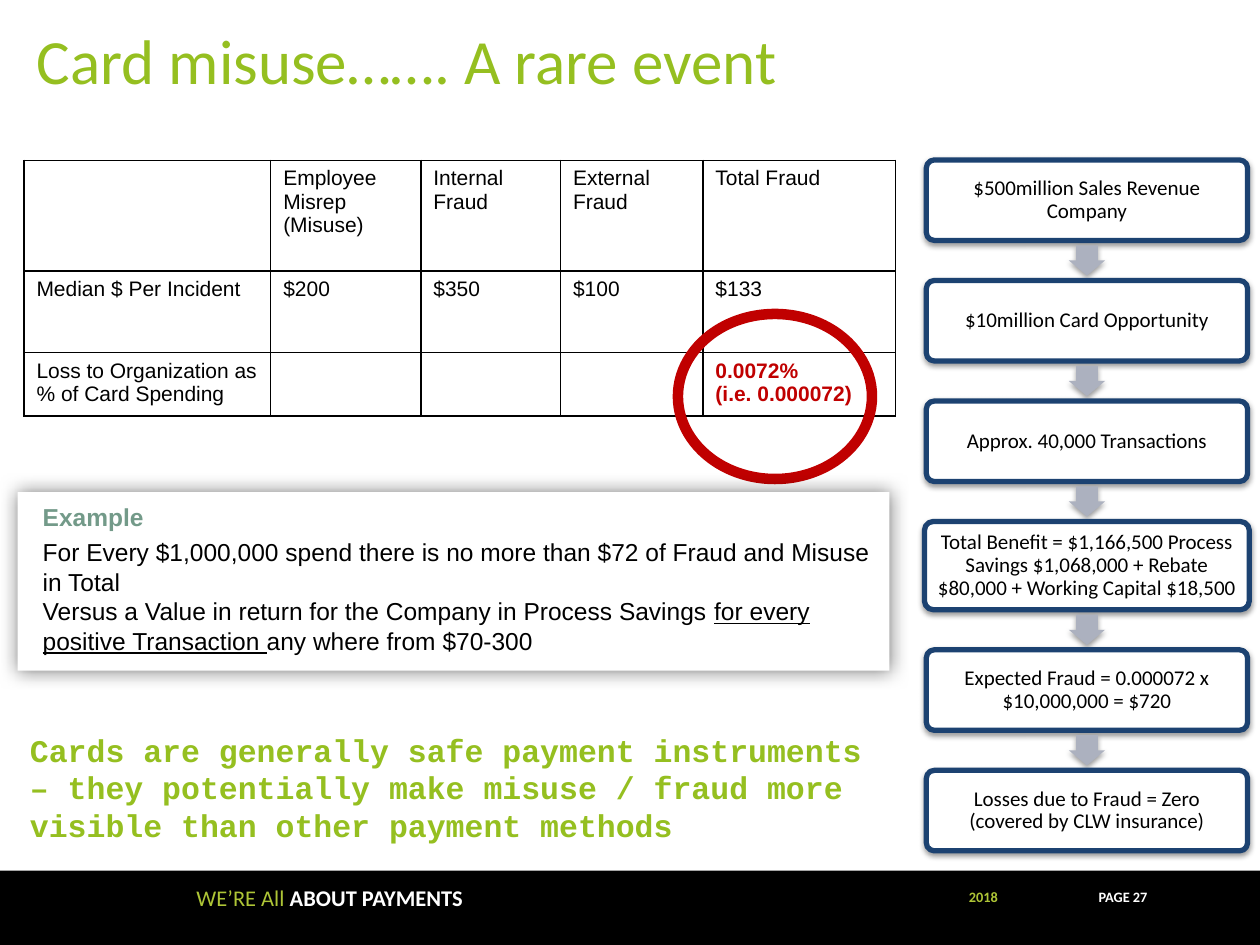
from lxml import etree
from pptx import Presentation
from pptx import util as u
from pptx.dml.color import RGBColor
from pptx.enum import shapes, text
from pptx.oxml import parse_xml
from pptx.oxml.ns import nsdecls, qn

Pt = u.Pt
HUES = {"black": "000000", "white": "FFFFFF", "lime": "95BF20", "leaf": "AEC536",
        "sage": "739A89", "red": "C00000", "navy": "1C4271", "gray": "ACB1BF"}
FORM = shapes.MSO_SHAPE
GRID = [["", "Employee Misrep (Misuse)", "Internal Fraud", "External Fraud", "Total Fraud"],
        ["Median $ Per Incident", "$200", "$350", "$100", "$133"],
        ["Loss to Organization as % of Card Spending", "", "", "", "0.0072%\n(i.e. 0.000072)"]]
STEPS = ["$500million Sales Revenue Company", "$10million Card Opportunity",
         "Approx. 40,000 Transactions",
         "Total Benefit = $1,166,500 Process Savings $1,068,000 + Rebate $80,000 + Working Capital $18,500",
         "Expected Fraud = 0.000072 x $10,000,000 = $720",
         "Losses due to Fraud = Zero (covered by CLW insurance)"]


def hue(name):
    """Return the named colour."""
    return RGBColor.from_string(HUES[name])


def add_run(para, words, size, face, tint, bold=False, line=None):
    """Add one formatted run to a paragraph."""
    run = para.add_run()
    run.text = words
    font = run.font
    font.size, font.name, font.bold, font.underline = Pt(size), face, bold, line
    font.color.rgb = hue(tint)


def set_frame(frame, pads, anchor=text.MSO_ANCHOR.TOP):
    """Set wrapping, insets and anchor of a text frame; return its first paragraph."""
    frame.word_wrap = True
    frame.vertical_anchor = anchor
    (frame.margin_left, frame.margin_top,
     frame.margin_right, frame.margin_bottom) = map(Pt, pads)
    return frame.paragraphs[0]


def add_form(slide, kind, box, fill=None, line=None, width=1):
    """Add a preset shape with a plain fill and line."""
    form = slide.shapes.add_shape(kind, *map(Pt, box))
    form.shadow.inherit = False
    if fill:
        form.fill.solid()
        form.fill.fore_color.rgb = hue(fill)
    else:
        form.fill.background()
    if line:
        form.line.color.rgb = hue(line)
        form.line.width = Pt(width)
    else:
        form.line.fill.background()
    return form


def add_shade(form, alpha, blur, dist, angle):
    """Give a shape a soft black shadow."""
    glow = form._element.spPr.find(qn("a:effectLst"))
    glow.append(parse_xml(
        f'<a:outerShdw {nsdecls("a")} blurRad="{Pt(blur)}" dist="{Pt(dist)}" '
        f'dir="{angle * 60000}" algn="ctr" rotWithShape="0"><a:srgbClr val="{HUES["black"]}">'
        f'<a:alpha val="{alpha * 1000}"/></a:srgbClr></a:outerShdw>'))


def add_text(slide, box, pads):
    """Add a text box and return its first paragraph."""
    return set_frame(slide.shapes.add_textbox(*map(Pt, box)).text_frame, pads)


def set_title(slide, box):
    """Place and format the title."""
    title = slide.shapes.title
    title.left, title.top, title.width, title.height = map(Pt, box)
    para = set_frame(title.text_frame, (7.2, 3.6, 7.2, 3.6))
    para.alignment = text.PP_ALIGN.LEFT
    add_run(para, "Card misuse……. A rare event", 36, "Calibri", "lime")


def add_edges(cell):
    """Draw a thin black line round a table cell."""
    props = cell._tc.get_or_add_tcPr()
    for side in ("lnL", "lnR", "lnT", "lnB"):
        edge = etree.SubElement(props, qn(f"a:{side}"), w=str(Pt(1)))
        fill = etree.SubElement(edge, qn("a:solidFill"))
        etree.SubElement(fill, qn("a:srgbClr"), val=HUES["black"])


def add_losses(slide, box):
    """Add the table of losses and ring its key figure."""
    left, top, width, height = box
    table = slide.shapes.add_table(3, 5, *map(Pt, box)).table
    table.first_row = table.horz_banding = False
    for col, span in zip(table.columns, (141, 85.8, 79.8, 81.4, 110.2)):
        col.width = Pt(span)
    for row, span in zip(table.rows, (63.2, 46.8, 34.5)):
        row.height = Pt(span)
    for i, row in enumerate(GRID):
        for j, words in enumerate(row):
            cell = table.cell(i, j)
            add_edges(cell)
            cell.fill.background()
            key = (i, j) == (2, 4)
            frame = cell.text_frame
            for n, part in enumerate(words.split("\n") if words else []):
                para = frame.add_paragraph() if n else frame.paragraphs[0]
                add_run(para, part, 12, "Arial", "red" if key else "black", key)
    ring = (left + 373.7, top + 87.8, 110.9, 94.3)
    add_form(slide, FORM.OVAL, ring, None, "red", 6)


def add_case(slide, box):
    """Add the worked example panel."""
    card = add_form(slide, FORM.RECTANGLE, box, "white")
    add_shade(card, 50, 11, 0, 0)
    frame = card.text_frame
    head = set_frame(frame, (14.4, 7.2, 10.8, 7.2))
    head.line_spacing, head.space_after = 0.9, Pt(3.5)
    add_run(head, "Example", 14, "Arial", "sage", True)
    cost, gain = frame.add_paragraph(), frame.add_paragraph()
    add_run(cost, "For Every $1,000,000 spend there is no more than $72 of Fraud and Misuse in Total",
            14, "Arial", "black")
    add_run(gain, "Versus a Value in return for the Company in Process Savings ", 14, "Arial", "black")
    add_run(gain, "for every positive Transaction ", 14, "Arial", "black", line=True)
    add_run(gain, "any where from $70-300", 14, "Arial", "black")
    for para in frame.paragraphs:
        para.alignment = text.PP_ALIGN.LEFT


def add_flow(slide, box):
    """Stack the steps down the box with an arrow in each gap."""
    left, top, width, height = box
    mid, low, tall = left + width / 2, 46, 50.4
    gap = (height - 5 * low - tall) / 5
    for i, words in enumerate(STEPS):
        big = i == 3
        high, wide = (tall, width) if big else (low, width - 2)
        step = add_form(slide, FORM.ROUNDED_RECTANGLE, (mid - wide / 2, top, wide, high),
                        "white", "navy", 3)
        step.adjustments[0] = 0.1
        add_shade(step, 38, 3.1, 1.6, 90)
        para = set_frame(step.text_frame, (5, 5, 5, 5), text.MSO_ANCHOR.MIDDLE)
        para.alignment, para.line_spacing = text.PP_ALIGN.CENTER, 0.9
        add_run(para, words, 12, "Calibri", "black")
        top += high + gap
        if i < len(STEPS) - 1:
            long, thick = 17.3, 20.7
            arrow = add_form(slide, FORM.RIGHT_ARROW,
                             (mid - long / 2, top - (gap + thick) / 2, long, thick), "gray")
            arrow.rotation = 90
            arrow.adjustments[0] = 0.6
            add_shade(arrow, 38, 3.1, 1.6, 90)


def add_claim(slide, box):
    """Add the closing statement."""
    para = add_text(slide, box, (7.2, 3.6, 7.2, 3.6))
    para.line_spacing = Pt(21.6)
    add_run(para, "Cards are generally safe payment instruments – they potentially make "
            "misuse / fraud more visible than other payment methods", 18, "Courier New", "lime", True)


def add_foot(slide, box):
    """Add the footer band with its motto, year and page."""
    left, top, width, height = box
    add_form(slide, FORM.RECTANGLE, box, "black")
    parts = [((112.3, 10, 203.8, 18.7), 12.8, 12.9,
              [("WE’RE All ", "leaf", False), ("ABOUT PAYMENTS", "white", True)]),
             ((553.7, 11.5, 64, 13), 8.2, 8.6, [("2018", "leaf", True)]),
             ((627.8, 11.5, 35.3, 13), 8.2, 8.6, [("PAGE 27", "white", True)])]
    for (x, y, w, h), size, lead, runs in parts:
        para = add_text(slide, (left + x, top + y, w, h), (0, 0, 0, 0))
        para.line_spacing = Pt(lead)
        for words, tint, bold in runs:
            add_run(para, words, size, "Calibri", tint, bold)


def main():
    """Build and save the slide."""
    deck = Presentation()
    deck.slide_width, deck.slide_height = Pt(720), Pt(540)
    slide = deck.slides.add_slide(deck.slide_layouts[5])
    add_foot(slide, (0, 497.5, 720, 42.5))
    set_title(slide, (13.7, 8.6, 688.3, 51.1))
    add_losses(slide, (13.7, 91.6, 498.2, 144.5))
    add_case(slide, (10, 281.3, 498.2, 102))
    add_flow(slide, (528.3, 91.4, 185.6, 394.8))
    add_claim(slide, (10, 414, 509.8, 72))
    deck.save("out.pptx")


if __name__ == "__main__":
    main()
